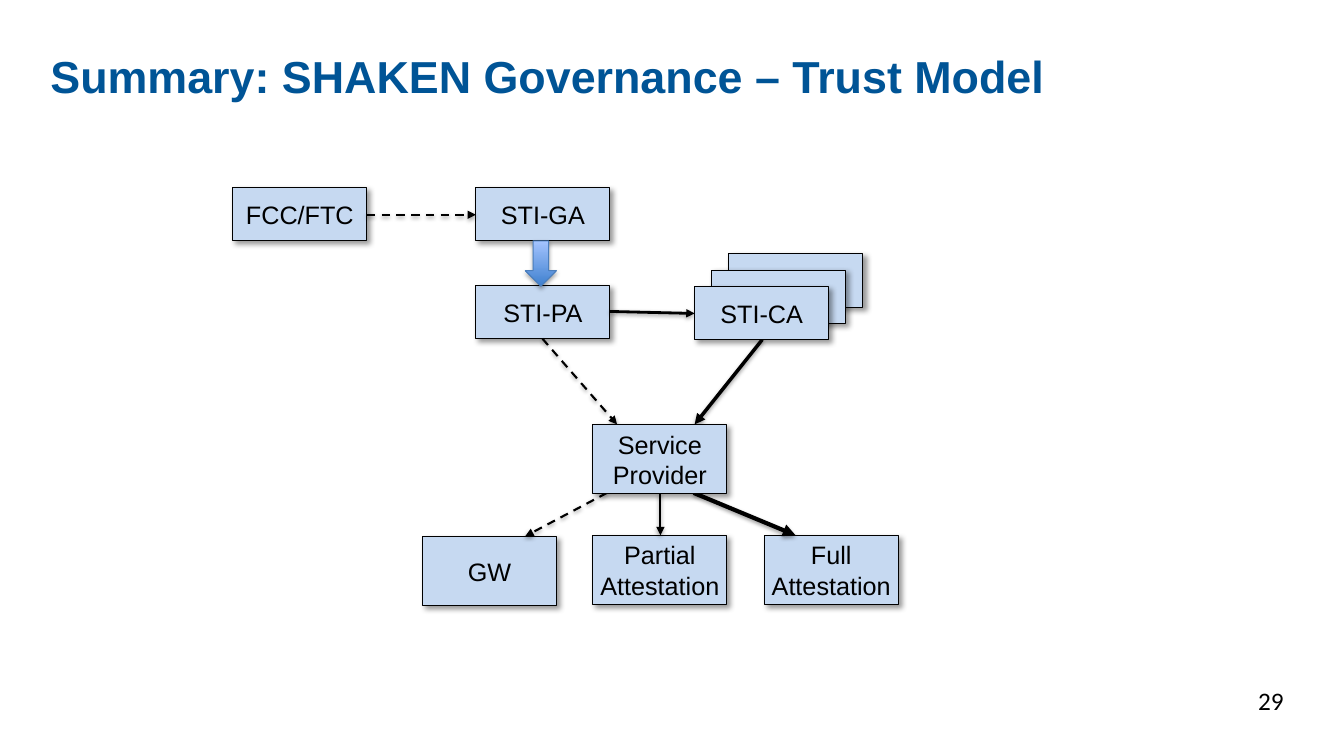
from dataclasses import dataclass

from lxml import etree
from pptx import Presentation
from pptx.dml.color import RGBColor
from pptx.enum.dml import MSO_LINE
from pptx.enum.shapes import MSO_CONNECTOR, MSO_SHAPE
from pptx.enum.text import MSO_ANCHOR, PP_ALIGN
from pptx.oxml.ns import qn
from pptx.util import Inches, Pt

RECTANGLE, DOWN_ARROW = MSO_SHAPE.RECTANGLE, MSO_SHAPE.DOWN_ARROW
STRAIGHT, DASH = MSO_CONNECTOR.STRAIGHT, MSO_LINE.DASH
LEFT, CENTER, RIGHT = PP_ALIGN.LEFT, PP_ALIGN.CENTER, PP_ALIGN.RIGHT
TOP, MIDDLE = MSO_ANCHOR.TOP, MSO_ANCHOR.MIDDLE


@dataclass(frozen=True)
class Theme:
    ink: str = "000000"
    title: str = "005496"
    box: str = "C6D9F1"
    arrow_line: str = "4B7EBC"
    arrow_stops: tuple = ("3F80CE", "A4C4FF")
    font: str = "Arial"
    number_font: str = "Calibri"
    title_size: float = 32
    body_size: float = 18
    outline: float = 0.75
    # Shadows: opacity in percent, blur and distance in points, angle in degrees
    box_shadow: tuple = (40, 4, 3, 45)
    arrow_shadow: tuple = (35, 3.1, 1.8, 90)
    line_shadow: tuple = (38, 3.1, 1.6, 90)


class SlideBuilder:
    def __init__(self, page, theme):
        self.page, self.theme = page, theme

    def set_text(self, shape, text, align, anchor, inset, **font):
        """Fill a text frame, one paragraph for each line of text."""
        frame = shape.text_frame
        sides = {f"margin_{side}": Inches(width) for side, width in
                 zip(("left", "top", "right", "bottom"), inset)}
        for name, value in {"word_wrap": True, "vertical_anchor": anchor, **sides}.items():
            setattr(frame, name, value)
        form = {"name": self.theme.font, "size": Pt(self.theme.body_size), "bold": False}
        color = font.pop("color", self.theme.ink)
        form.update(font)
        for index, line in enumerate(text.split("\n")):
            para = frame.add_paragraph() if index else frame.paragraphs[0]
            para.alignment = align
            span = para.add_run()
            span.text = line
            for name, value in form.items():
                setattr(span.font, name, value)
            span.font.color.rgb = RGBColor.from_string(color)

    def outline(self, shape, color, width):
        shape.line.color.rgb = RGBColor.from_string(color)
        shape.line.width = Pt(width)

    def cast_shadow(self, shape, shadow):
        opacity, blur, distance, angle = shadow
        effects = etree.SubElement(shape.element.spPr, qn("a:effectLst"))
        outer = etree.SubElement(effects, qn("a:outerShdw"), {
            "blurRad": str(Pt(blur)), "dist": str(Pt(distance)),
            "dir": str(angle * 60000), "rotWithShape": "0"})
        color = etree.SubElement(outer, qn("a:srgbClr"), val=self.theme.ink)
        etree.SubElement(color, qn("a:alpha"), val=str(opacity * 1000))

    def title(self, text, area):
        holder = self.page.shapes.title
        for name, value in zip(("left", "top", "width", "height"), area):
            setattr(holder, name, Inches(value))
        self.set_text(holder, text, LEFT, MIDDLE, (0, 0, 0, 0), bold=True,
                      size=Pt(self.theme.title_size), color=self.theme.title)

    def page_number(self, text, area):
        holder = self.page.shapes.add_textbox(*map(Inches, area))
        self.set_text(holder, text, RIGHT, TOP, (0.1, 0.05, 0.1, 0.05),
                      name=self.theme.number_font)

    def box(self, text, left, top, height):
        area = map(Inches, (left, top, BOX_WIDTH, height))
        box = self.page.shapes.add_shape(RECTANGLE, *area)
        box.fill.solid()
        box.fill.fore_color.rgb = RGBColor.from_string(self.theme.box)
        self.outline(box, self.theme.ink, self.theme.outline)
        self.cast_shadow(box, self.theme.box_shadow)
        if text:
            self.set_text(box, text, CENTER, MIDDLE, (0.04, 0.05, 0.04, 0.05))

    def block_arrow(self, area):
        arrow = self.page.shapes.add_shape(DOWN_ARROW, *map(Inches, area))
        arrow.fill.gradient()
        arrow.fill.gradient_angle = 90
        for stop, color in zip(arrow.fill.gradient_stops, self.theme.arrow_stops):
            stop.color.rgb = RGBColor.from_string(color)
        self.outline(arrow, self.theme.arrow_line, self.theme.outline)
        self.cast_shadow(arrow, self.theme.arrow_shadow)

    def link(self, start, end, width, dashed=False):
        link = self.page.shapes.add_connector(STRAIGHT, *map(Inches, start + end))
        self.outline(link, self.theme.ink, width)
        if dashed:
            link.line.dash_style = DASH
        line = link.element.spPr.find(qn("a:ln"))
        etree.SubElement(line, qn("a:tailEnd"), type="triangle")
        self.cast_shadow(link, self.theme.line_shadow)


# Layout of the diagram
BOX_WIDTH, LOW, TALL = 1.33, 0.53, 0.69
BOXES = [
    ("FCC/FTC", 2.31, 1.86, LOW),
    ("STI-GA", 4.72, 1.86, LOW),
    ("STI-PA", 4.72, 2.83, LOW),
    ("GW", 4.19, 5.32, TALL),
    ("Partial\nAttestation", 5.88, 5.31, TALL),
    ("Full\nAttestation", 7.58, 5.31, TALL),
]
LINKS = [
    ((3.64, 2.13), (4.72, 2.13), 1.5, True),
    ((6.05, 3.09), (6.89, 3.11), 2),
    ((5.38, 3.36), (6.12, 4.21), 1.5, True),
    ((7.56, 3.37), (6.89, 4.21), 2.5),
    ((6.02, 4.89), (5.21, 5.32), 1.5, True),
    ((6.55, 4.89), (6.55, 5.31), 1.5),
    ((6.88, 4.89), (7.89, 5.31), 3),
]
CA_LEFT, CA_TOP, CA_SHIFT_X, CA_SHIFT_Y = 6.89, 2.84, 0.17, 0.16


def main():
    deck = Presentation()
    deck.slide_width, deck.slide_height = Inches(13.33), Inches(7.5)
    page = deck.slides.add_slide(deck.slide_layouts[5])
    builder = SlideBuilder(page, Theme())

    # Title and page number
    builder.title("Summary: SHAKEN Governance – Trust Model", (0.5, 0.25, 12.33, 1))
    builder.page_number("29", (12, 6.75, 0.83, 0.5))

    # Boxes, with the rear cards of the STI-CA stack
    for box in BOXES:
        builder.box(*box)
    for step in (2, 1):
        builder.box("", CA_LEFT + step * CA_SHIFT_X, CA_TOP - step * CA_SHIFT_Y, LOW)

    # Arrows
    builder.block_arrow((5.21, 2.39, 0.31, 0.45))
    for link in LINKS:
        builder.link(*link)

    # Boxes in front of the arrows
    builder.box("STI-CA", CA_LEFT, CA_TOP, LOW)
    builder.box("Service\nProvider", 5.88, 4.21, TALL)

    deck.save("out.pptx")


if __name__ == "__main__":
    main()
